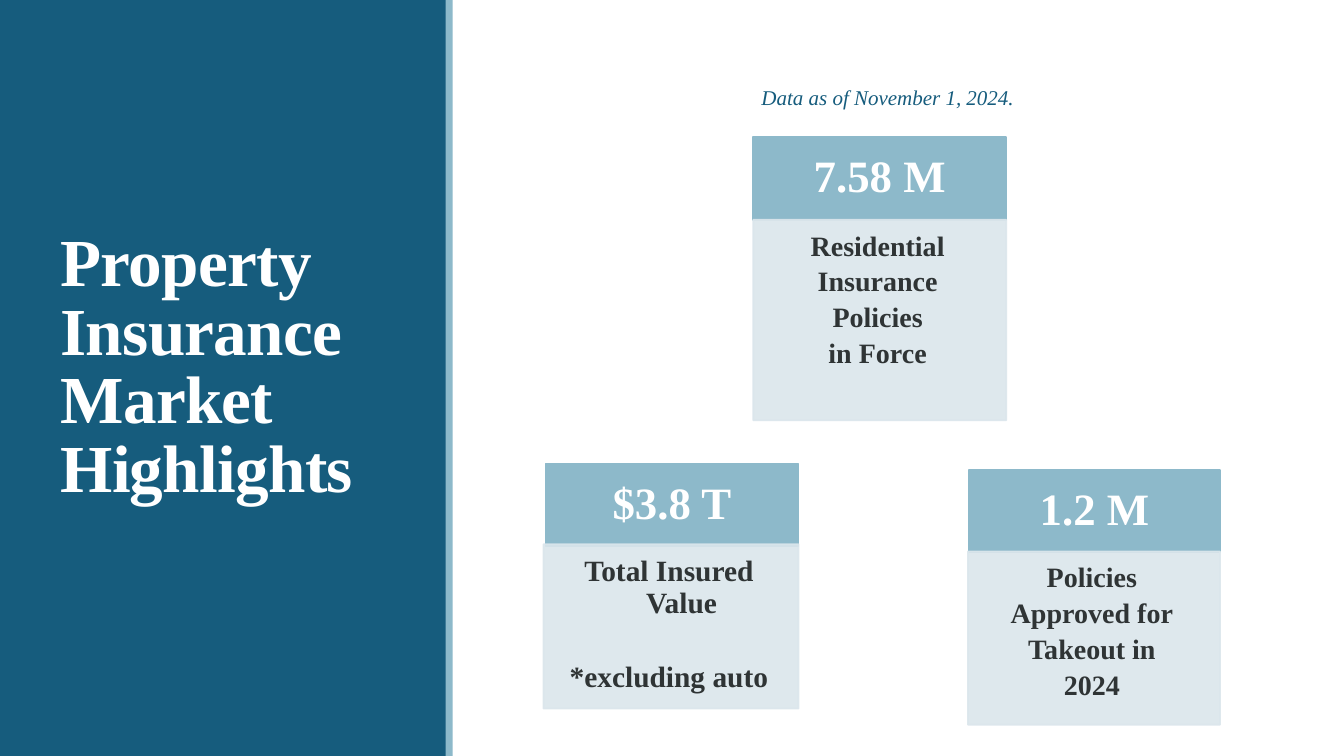
from lxml.etree import SubElement
from pptx import Presentation
from pptx.dml.color import RGBColor
from pptx.enum.shapes import MSO_SHAPE
from pptx.enum.text import MSO_ANCHOR, MSO_AUTO_SIZE, PP_ALIGN
from pptx.oxml.ns import qn
from pptx.util import Pt

EMU_PER_PX = 9144  # 100 px to the inch
FONT = "Times New Roman"
COLORS = {
    "panel": "165C7D",
    "accent": "8DB9CA",
    "card": "DBE6EC",
    "text": "2F3435",
    "white": "FFFFFF",
}
# Header box, body box, figure, label lines, label size, space before last line
CARDS = [
    ((747, 136, 251, 82), (747, 218, 251, 199), "7.58 M",
     ["Residential", "Insurance", "Policies", "in Force"], 20, 0),
    ((961, 466, 249, 82), (960, 547, 250, 172), "1.2 M",
     ["Policies", "Approved for", "Takeout in", "2024"], 20, 0),
    ((541, 460, 251, 82), (539, 540, 253, 163), "$3.8 T",
     ["Total Insured Value", "*excluding auto"], 21, 26),
]


def px(value):
    return value * EMU_PER_PX


def color(name):
    return RGBColor.from_string(COLORS[name])


def place(shape, box):
    shape.left, shape.top, shape.width, shape.height = map(px, box)


def set_insets(frame, left, top, right, bottom):
    frame.margin_left, frame.margin_top = px(left), px(top)
    frame.margin_right, frame.margin_bottom = px(right), px(bottom)


def write(paragraph, text, size, ink, bold=False, italic=False, indent=0,
          align=PP_ALIGN.CENTER, line=0.9, before=0, after=0, tracking=0):
    properties = paragraph._p.get_or_add_pPr()
    properties.set("marL", str(px(indent)))
    properties.set("indent", str(-px(indent)))
    paragraph.alignment = align
    paragraph.line_spacing = line
    paragraph.space_before, paragraph.space_after = Pt(before), Pt(after)
    SubElement(properties, qn("a:buNone"))
    run = paragraph.add_run()
    run.text = text
    run.font.name, run.font.size = FONT, Pt(size)
    run.font.bold, run.font.italic = bold, italic
    run.font.color.rgb = color(ink)
    if tracking:
        run._r.get_or_add_rPr().set("spc", str(tracking))


def add_box(slide, box, fill, outlined=True, opacity=100):
    shape = slide.shapes.add_shape(MSO_SHAPE.RECTANGLE, *map(px, box))
    shape.shadow.inherit = False
    shape.fill.solid()
    shape.fill.fore_color.rgb = color(fill)
    if outlined:
        shape.line.color.rgb = color(fill)
        shape.line.width = Pt(1.25)
    else:
        shape.line.fill.background()
    if opacity < 100:
        for shade in shape._element.spPr.iter(qn("a:srgbClr")):
            SubElement(shade, qn("a:alpha")).set("val", str(opacity * 1000))
    shape.text_frame.word_wrap = True
    return shape


def add_card(slide, header_box, body_box, figure, labels, size, last_gap):
    # Figure band
    header = add_box(slide, header_box, "accent").text_frame
    header.vertical_anchor = MSO_ANCHOR.MIDDLE
    set_insets(header, 25, 14, 25, 14)
    write(header.paragraphs[0], figure, 32, "white", bold=True)

    # Label lines
    body = add_box(slide, body_box, "card", opacity=90).text_frame
    body.vertical_anchor = MSO_ANCHOR.TOP
    set_insets(body, 12, 12, 16, 17)
    for index, label in enumerate(labels):
        paragraph = body.add_paragraph() if index else body.paragraphs[0]
        before = last_gap if index == len(labels) - 1 else 0
        write(paragraph, label, size, "text", bold=True, indent=25,
              before=before, after=4)


def fill_placeholder(placeholder, box, anchor, text, **style):
    place(placeholder, box)
    frame = placeholder.text_frame
    frame.word_wrap = True
    frame.auto_size = MSO_AUTO_SIZE.NONE
    frame.vertical_anchor = anchor
    write(frame.paragraphs[0], text, **style)
    # Bring the placeholder in front of the panels
    placeholder.element.getparent().append(placeholder.element)


def main():
    presentation = Presentation()
    presentation.slide_width, presentation.slide_height = px(1333), px(750)
    slide = presentation.slides.add_slide(presentation.slide_layouts[1])
    title, note = slide.placeholders

    # Side panel
    add_box(slide, (0, 0, 443, 750), "panel", outlined=False)
    add_box(slide, (442, 0, 7, 750), "accent", outlined=False)

    # Cards
    for card in CARDS:
        add_card(slide, *card)

    # Title and date note
    fill_placeholder(title, (50, 65, 350, 442), MSO_ANCHOR.BOTTOM,
                     "Property Insurance Market Highlights", size=48,
                     ink="white", bold=True, align=PP_ALIGN.LEFT, line=0.85,
                     tracking=-50)
    fill_placeholder(note, (522, 82, 717, 46), MSO_ANCHOR.TOP,
                     "Data as of November 1, 2024.", size=15, ink="panel",
                     italic=True, after=2)
    presentation.save("out.pptx")


if __name__ == "__main__":
    main()
